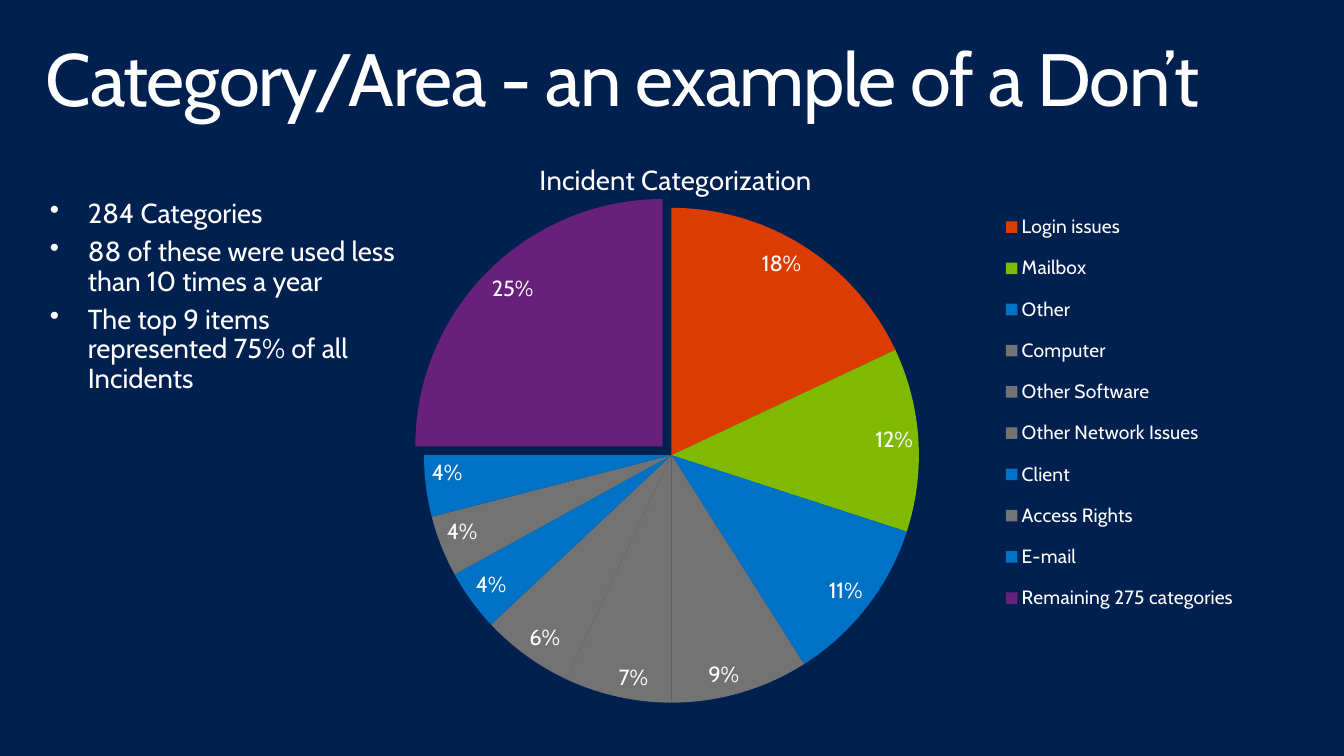
from lxml.etree import SubElement
from pptx import Presentation
from pptx.chart.data import CategoryChartData as ChartData
from pptx.dml.color import RGBColor
from pptx.enum.chart import XL_CHART_TYPE as Kind, XL_LABEL_POSITION as Spot, XL_LEGEND_POSITION as Side
from pptx.enum.text import MSO_ANCHOR as Anchor, MSO_AUTO_SIZE as Fit, PP_ALIGN as Align
from pptx.oxml.ns import qn
from pptx.util import Pt

PX = 9255
FACE = "Cabin"
WHITE = "FFFFFF"
GRAY, BLUE = "737373", "0072C6"
PARTS = [
    ("Login issues", 0.18, "DC3C00"),
    ("Mailbox", 0.12, "7FBA00"),
    ("Other", 0.11, BLUE),
    ("Computer", 0.09, GRAY),
    ("Other Software", 0.07, GRAY),
    ("Other Network Issues", 0.06, GRAY),
    ("Client", 0.04, BLUE),
    ("Access Rights", 0.04, GRAY),
    ("E-mail", 0.04, BLUE),
    ("Remaining 275 categories", 0.25, "68217A"),
]
POINTS = [
    "284 Categories",
    "88 of these were used less than 10 times a year",
    "The top 9 items represented 75% of all Incidents",
]


def px(*sizes):
    return [size * PX for size in sizes]


def color(code):
    return RGBColor.from_string(code)


def style(font, size):
    font.name, font.size, font.bold = FACE, Pt(size), False
    font.color.rgb = color(WHITE)


def write(frame, lines, size, pad, after=0, indent=0, track=0):
    frame.word_wrap = True
    frame.auto_size = Fit.NONE
    frame.vertical_anchor = Anchor.TOP
    frame.margin_left = frame.margin_right = pad[0] * PX
    frame.margin_top = frame.margin_bottom = pad[1] * PX
    for i, line in enumerate(lines):
        para = frame.paragraphs[0] if i == 0 else frame.add_paragraph()
        para.alignment = Align.LEFT
        para.line_spacing = 0.9
        para.space_before, para.space_after = Pt(0), Pt(after)
        if indent:
            props = para._p.get_or_add_pPr()
            props.set("marL", str(indent * PX))
            props.set("indent", str(-indent * PX))
            SubElement(props, qn("a:buChar")).set("char", "•")
        run = para.add_run()
        run.text = line
        style(run.font, size)
        if track:
            run.font._element.set("spc", str(track))


def place(node, index, **sizes):
    for old in node.findall(qn("c:layout")):
        node.remove(old)
    layout = SubElement(node, qn("c:layout"))
    node.insert(index, layout)
    manual = SubElement(layout, qn("c:manualLayout"))
    if node.tag == qn("c:plotArea"):
        SubElement(manual, qn("c:layoutTarget")).set("val", "inner")
    for mode in ("xMode", "yMode"):
        SubElement(manual, qn("c:" + mode)).set("val", "edge")
    for key, size in sizes.items():
        SubElement(manual, qn("c:" + key)).set("val", str(size))


def head(slide, x, y, w, h):
    title = slide.shapes.title
    title.left, title.top, title.width, title.height = px(x, y, w, h)
    write(title.text_frame, ["Category/Area - an example of a Don’t"], 54, (16, 10), track=-100)


def pie(slide, x, y, w, h):
    data = ChartData(number_format="0%")
    data.categories = [name for name, share, fill in PARTS]
    data.add_series("Series 1", [share for name, share, fill in PARTS])
    chart = slide.shapes.add_chart(Kind.PIE, *px(x, y, w, h), data).chart
    style(chart.font, 10)

    chart.has_title = True
    frame = chart.chart_title.text_frame
    frame.text = "Incident Categorization"
    style(frame.paragraphs[0].runs[0].font, 20)
    place(chart.chart_title._element, 1, x=0.39, y=0.04)

    chart.has_legend = True
    legend = chart.legend
    legend.position = Side.RIGHT
    legend.include_in_layout = False
    style(legend.font, 14)
    place(legend._element, 1, x=0.76, y=0.11, w=0.2, h=0.72)

    plot = chart.plots[0]
    plot.vary_by_categories = True
    place(plot._element.getparent(), 0, x=0.301, y=0.127, w=0.398, h=0.829)
    series = plot.series[0]
    for i, (name, share, fill) in enumerate(PARTS):
        paint = series.points[i].format.fill
        paint.solid()
        paint.fore_color.rgb = color(fill)
    last = series._element.findall(qn("c:dPt"))[-1]
    burst = SubElement(last, qn("c:explosion"))
    burst.set("val", "5")
    last.find(qn("c:spPr")).addprevious(burst)

    labels = series.data_labels
    labels.show_value = True
    labels.show_percentage = False
    labels.number_format = "0%"
    labels.number_format_is_linked = False
    labels.position = Spot.INSIDE_END
    style(labels.font, 16)


def notes(slide, x, y, w, h):
    box = slide.shapes.add_textbox(*px(x, y, w, h))
    write(box.text_frame, POINTS, 20, (20, 16), after=6, indent=38)


def main():
    deck = Presentation()
    deck.slide_width, deck.slide_height = px(1344, 756)
    slide = deck.slides.add_slide(deck.slide_layouts[5])
    back = slide.background.fill
    back.solid()
    back.fore_color.rgb = color("002050")
    head(slide, 30, 32, 1284, 99)
    pie(slide, 49, 132, 1245, 597)
    notes(slide, 30, 184, 404, 228)
    deck.save("out.pptx")


if __name__ == "__main__":
    main()
